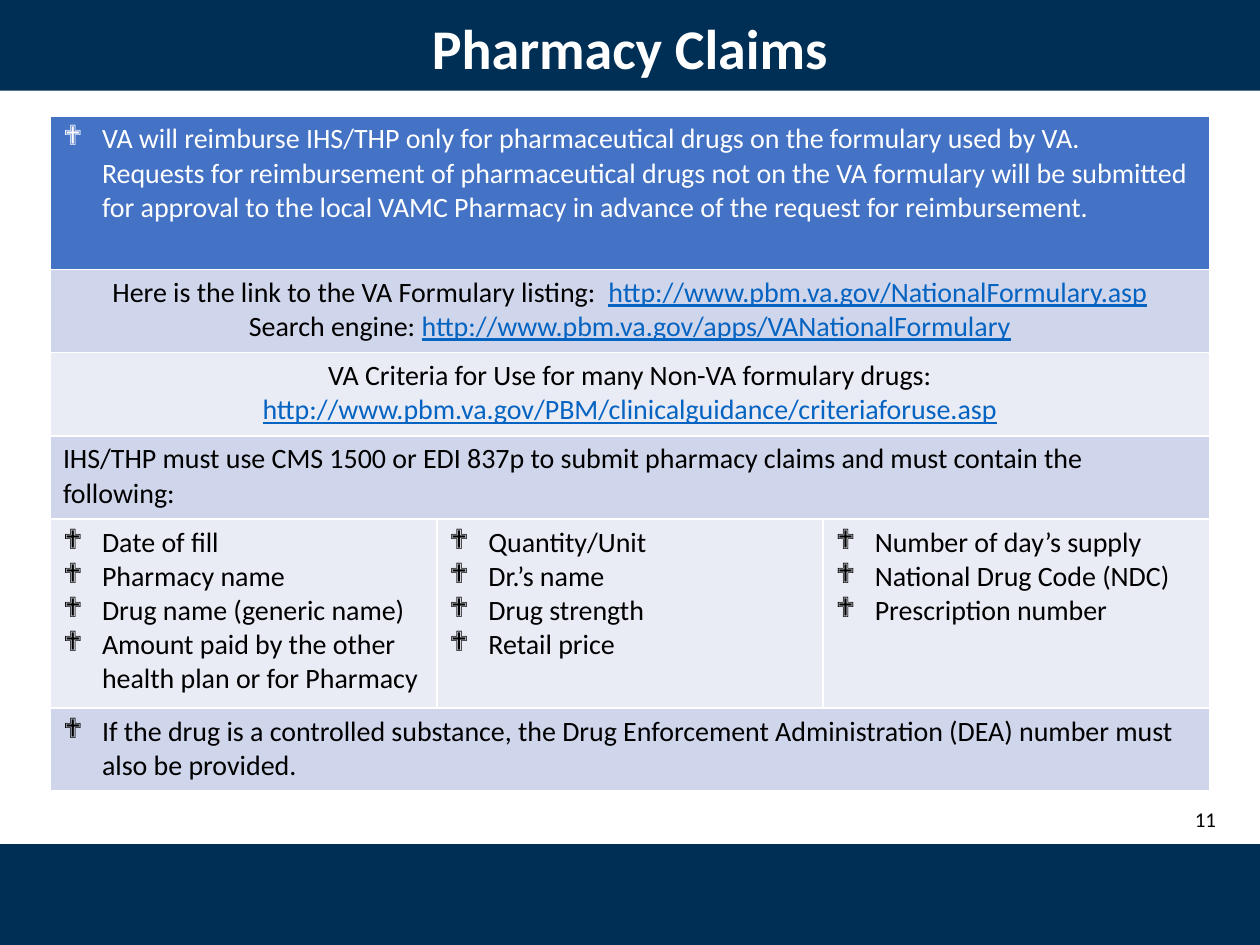
"""Build the Pharmacy Claims slide: title band, requirements table, footer band."""
from lxml import etree
from pptx import Presentation
from pptx.dml.color import RGBColor
from pptx.enum import shapes, text
from pptx.oxml.ns import qn
from pptx.util import Inches, Pt

NAVY = RGBColor(0x00, 0x2F, 0x56)
WHITE = RGBColor(0xFF, 0xFF, 0xFF)
BLACK = RGBColor(0x00, 0x00, 0x00)
BLUE = RGBColor(0x44, 0x72, 0xC4)
LINK = RGBColor(0x05, 0x63, 0xC1)
DARK_ROW = RGBColor(0xCF, 0xD5, 0xEA)
LIGHT_ROW = RGBColor(0xE9, 0xEB, 0xF5)
LEFT, CENTER, RIGHT = text.PP_ALIGN.LEFT, text.PP_ALIGN.CENTER, text.PP_ALIGN.RIGHT


def write(frame, lines, size=16, color=BLACK, bold=False, align=LEFT, bullet=False):
    """Write one paragraph per line; a newline breaks it and web addresses look like links."""
    frame.word_wrap = True
    for index, line in enumerate(lines):
        paragraph = frame.add_paragraph() if index else frame.paragraphs[0]
        paragraph.alignment = align
        if bullet:
            properties = paragraph._p.get_or_add_pPr()
            properties.set("marL", str(Inches(0.31)))
            properties.set("indent", str(-Inches(0.31)))
            etree.SubElement(properties, qn("a:buFont"), typeface="Wingdings")
            etree.SubElement(properties, qn("a:buChar"), char="❖")
        for break_index, segment in enumerate(line.split("\n")):
            if break_index:
                paragraph.add_line_break()
            lead, scheme, address = segment.partition("http://")
            for part, is_link in ((lead, False), (scheme + address, True)):
                if part:
                    run = paragraph.add_run()
                    run.text = part
                    run.font.name = "Calibri"
                    run.font.size = Pt(size)
                    run.font.bold = bold
                    run.font.underline = is_link
                    run.font.color.rgb = LINK if is_link else color


def add_borders(cell):
    """Give a cell thin white borders on all four sides."""
    properties = cell._tc.get_or_add_tcPr()
    for position, side in enumerate(("a:lnL", "a:lnR", "a:lnT", "a:lnB")):
        border = etree.Element(qn(side), w=str(Pt(1)))
        fill = etree.SubElement(border, qn("a:solidFill"))
        etree.SubElement(fill, qn("a:srgbClr"), val=str(WHITE))
        properties.insert(position, border)


deck = Presentation()
deck.slide_width, deck.slide_height = Inches(10), Inches(7.5)
slide = deck.slides.add_slide(deck.slide_layouts[5])

title = slide.shapes.title
title.left, title.top, title.width, title.height = 0, 0, Inches(10), Inches(0.75)
title.text_frame.vertical_anchor = text.MSO_ANCHOR.MIDDLE
write(title.text_frame, ["Pharmacy Claims"], size=32, color=WHITE, bold=True, align=CENTER)

for band_top in (-0.08, 6.7):
    band = slide.shapes.add_shape(
        shapes.MSO_SHAPE.RECTANGLE, 0, Inches(band_top), Inches(10), Inches(0.8))
    band.shadow.inherit = False
    band.fill.solid()
    band.fill.fore_color.rgb = NAVY
    band.line.fill.background()
    title._element.addprevious(band._element)

page_number = slide.shapes.add_textbox(Inches(9.21), Inches(6.3), Inches(0.54), Inches(0.4))
page_number.text_frame.vertical_anchor = text.MSO_ANCHOR.MIDDLE
write(page_number.text_frame, ["11"], size=12, align=RIGHT)

bulleted = {"bullet": True}
centered = {"align": CENTER}
claim_rows = [
    (1.22, BLUE, {"bullet": True, "color": WHITE}, [[
        "VA will reimburse IHS/THP only for pharmaceutical drugs on the formulary used by VA.\n"
        "Requests for reimbursement of pharmaceutical drugs not on the VA formulary will be "
        "submitted for approval to the local VAMC Pharmacy in advance of the request for "
        "reimbursement."]]),
    (0.66, DARK_ROW, centered, [[
        "Here is the link to the VA Formulary listing:  "
        "http://www.pbm.va.gov/NationalFormulary.asp",
        "Search engine: http://www.pbm.va.gov/apps/VANationalFormulary"]]),
    (0.66, LIGHT_ROW, centered, [[
        "VA Criteria for Use for many Non-VA formulary drugs: "
        "http://www.pbm.va.gov/PBM/clinicalguidance/criteriaforuse.asp"]]),
    (0.66, DARK_ROW, {}, [[
        "IHS/THP must use CMS 1500 or EDI 837p to submit pharmacy claims and must contain "
        "the following:"]]),
    (1.5, LIGHT_ROW, bulleted, [
        ["Date of fill", "Pharmacy name", "Drug name (generic name)",
         "Amount paid by the other health plan or for Pharmacy"],
        ["Quantity/Unit", "Dr.’s name", "Drug strength", "Retail price"],
        ["Number of day’s supply", "National Drug Code (NDC)", "Prescription number"]]),
    (0.66, DARK_ROW, bulleted, [[
        "If the drug is a controlled substance, the Drug Enforcement Administration (DEA) "
        "number must also be provided."]]),
]

claims = slide.shapes.add_table(
    len(claim_rows), 3, Inches(0.4), Inches(0.92), Inches(9.2), Inches(5.36)).table
for row_index, (height, row_color, style, contents) in enumerate(claim_rows):
    claims.rows[row_index].height = Inches(height)
    for column in range(3):
        cell = claims.cell(row_index, column)
        cell.fill.solid()
        cell.fill.fore_color.rgb = row_color
        add_borders(cell)
    if len(contents) == 1:
        claims.cell(row_index, 0).merge(claims.cell(row_index, 2))
    for column, lines in enumerate(contents):
        write(claims.cell(row_index, column).text_frame, lines, **style)

deck.save("out.pptx")
